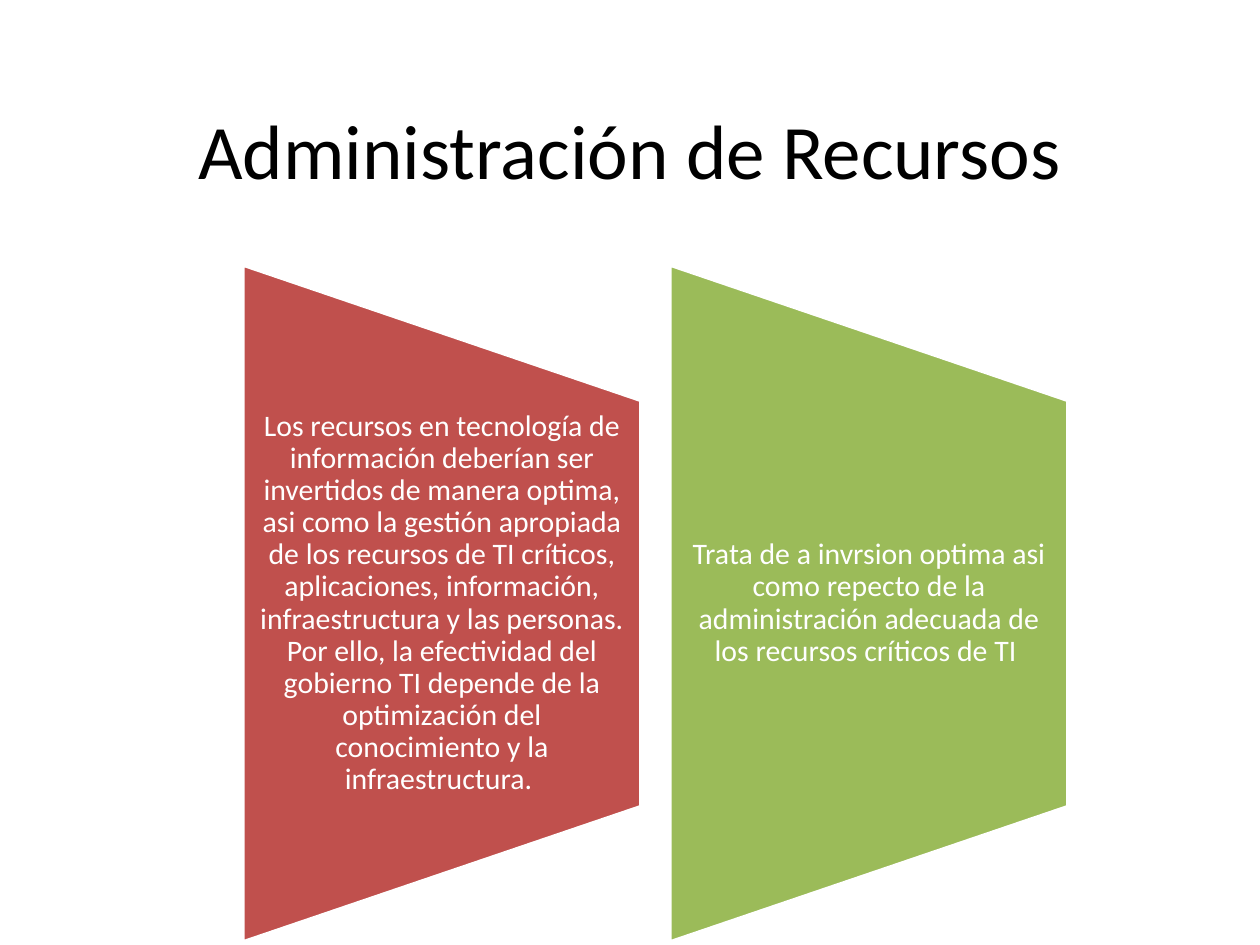
from dataclasses import dataclass

from pptx import Presentation
from pptx.dml.color import RGBColor
from pptx.enum.shapes import MSO_SHAPE
from pptx.enum.text import MSO_ANCHOR, PP_ALIGN
from pptx.util import Emu, Pt

PX = 914400 // 126  # one px in EMU


@dataclass(frozen=True)
class Theme:
    font: str = "Calibri"
    title_size: int = 44
    body_size: int = 17
    ink: str = "000000"
    paper: str = "FFFFFF"
    red: str = "C0504D"
    green: str = "9BBB59"


THEME = Theme()

PANELS = [
    ("Los recursos en tecnología de información deberían ser invertidos de "
     "manera optima, asi como la gestión apropiada de los recursos de TI "
     "críticos, aplicaciones, información, infraestructura y las personas. "
     "Por ello, la efectividad del gobierno TI depende de la optimización "
     "del conocimiento y la infraestructura. ", THEME.red),
    ("Trata de a invrsion optima asi como repecto de la administración "
     "adecuada de los recursos críticos de TI ", THEME.green),
]


def px(value):
    return Emu(round(value * PX))


def add_text(slide, text, box, *, size, color, inset=0, spacing=1.0):
    """Add centred, wrapped text in a box of (left, top, width, height) px."""
    frame = slide.shapes.add_textbox(*map(px, box)).text_frame
    frame.word_wrap = True
    frame.vertical_anchor = MSO_ANCHOR.MIDDLE
    frame.margin_left = frame.margin_right = px(inset)
    frame.margin_top = frame.margin_bottom = 0
    paragraph = frame.paragraphs[0]
    paragraph.alignment = PP_ALIGN.CENTER
    paragraph.line_spacing = spacing
    run = paragraph.add_run()
    run.text = text
    run.font.name = THEME.font
    run.font.size = Pt(size)
    run.font.color.rgb = RGBColor.from_string(color)


def add_title(slide, box):
    add_text(slide, "Administración de Recursos", box,
             size=THEME.title_size, color=THEME.ink)


def add_panel(slide, box, text, color):
    left, top, width, height = box

    # Trapezoid, turned on its side about the centre of the box
    turn = (height - width) / 2
    trapezoid = slide.shapes.add_shape(
        MSO_SHAPE.FLOWCHART_MANUAL_OPERATION,
        px(left - turn), px(top + turn), px(height), px(width))
    trapezoid.rotation = 270
    trapezoid.shadow.inherit = False
    trapezoid.fill.solid()
    trapezoid.fill.fore_color.rgb = RGBColor.from_string(color)
    trapezoid.line.color.rgb = RGBColor.from_string(THEME.paper)
    trapezoid.line.width = Pt(2)

    # Text in the middle three fifths of the height
    add_text(slide, text, (left, top + height / 5, width, height * 3 / 5),
             size=THEME.body_size, color=THEME.paper, inset=15, spacing=0.9)


def add_panels(slide, box, gap):
    left, top, width, height = box
    panel_width = (width - gap * (len(PANELS) - 1)) / len(PANELS)
    for index, (text, color) in enumerate(PANELS):
        panel_left = left + index * (panel_width + gap)
        add_panel(slide, (panel_left, top, panel_width, height), text, color)


def main():
    deck = Presentation()
    deck.slide_width, deck.slide_height = px(1260), px(945)
    slide = deck.slides.add_slide(deck.slide_layouts[6])
    add_title(slide, (60, 79, 1140, 140))
    add_panels(slide, (243, 265, 825, 677), gap=29)
    deck.save("out.pptx")


if __name__ == "__main__":
    main()
